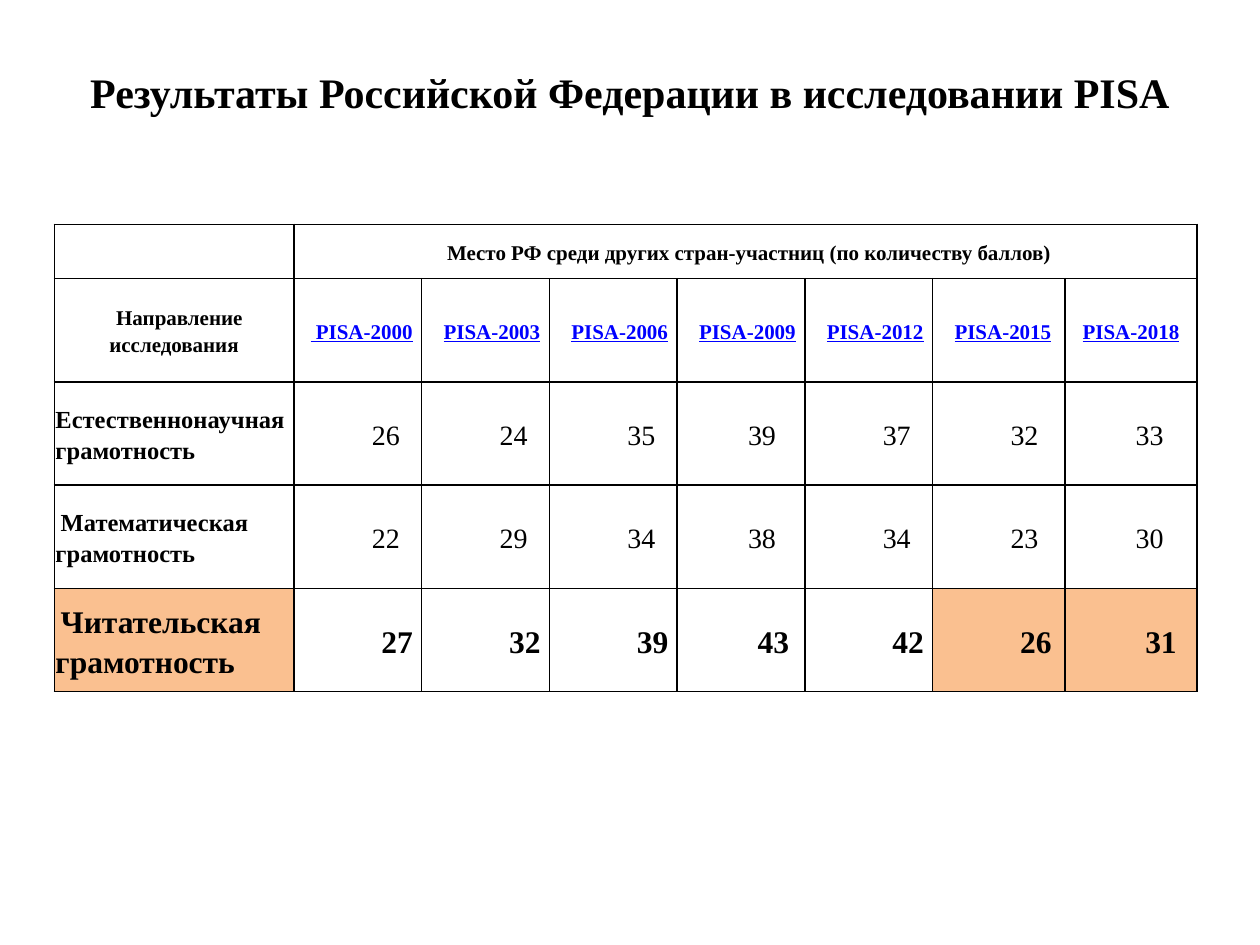
"""Build a slide with a table of PISA results."""
from dataclasses import dataclass

from lxml.etree import SubElement
from pptx import Presentation
from pptx.dml.color import RGBColor
from pptx.enum.text import MSO_ANCHOR as Anchor, PP_ALIGN as Align
from pptx.oxml.ns import qn
from pptx.util import Pt


@dataclass(frozen=True)
class Theme:
    font: str = "Times New Roman"
    text: str = "000000"
    link: str = "0000FF"
    accent: str = "FAC090"
    title: float = 24
    head: float = 12
    label: float = 14
    value: float = 16
    strong: float = 18


class Deck:
    def __init__(self, theme):
        self.theme = theme
        self.prs = Presentation()
        self.prs.slide_width, self.prs.slide_height = Pt(720), Pt(540)
        self.s = self.prs.slides.add_slide(self.prs.slide_layouts[5])

    def style(self, p, size, bold=True, color=None, align=Align.LEFT):
        p.alignment, p.line_spacing, p.space_after = align, 1.15, Pt(10)
        f = p.font
        f.name, f.size, f.bold = self.theme.font, Pt(size), bold
        f.color.rgb = RGBColor.from_string(color or self.theme.text)

    def title(self, text, x, y, w, h):
        sp = self.s.shapes.title
        sp.left, sp.top, sp.width, sp.height = Pt(x), Pt(y), Pt(w), Pt(h)
        tf = sp.text_frame
        tf.text, tf.vertical_anchor = text, Anchor.MIDDLE
        tf.margin_bottom = Pt(36)
        self.style(tf.paragraphs[0], self.theme.title, align=Align.CENTER)

    def table(self, x, y, widths, heights):
        sp = self.s.shapes.add_table(len(heights), len(widths), Pt(x), Pt(y),
                                     Pt(sum(widths)), Pt(sum(heights)))
        tbl = sp.table
        tbl.first_row = tbl.horz_banding = False
        for col, width in zip(tbl.columns, widths):
            col.width = Pt(width)
        for row, height in zip(tbl.rows, heights):
            row.height = Pt(height)
        for cell in tbl.iter_cells():
            self.borders(cell)
            cell.fill.background()
        return tbl

    def borders(self, cell):
        tc_pr = cell._tc.get_or_add_tcPr()
        for side in ("lnL", "lnR", "lnT", "lnB"):
            ln = SubElement(tc_pr, qn(f"a:{side}"), w=str(Pt(1)))
            fill = SubElement(ln, qn("a:solidFill"))
            SubElement(fill, qn("a:srgbClr"), val=self.theme.text)

    def cell(self, cell, text, size, left=0.7, first=0, underline=False, fill=None, **style):
        cell.text, cell.vertical_anchor = text, Anchor.MIDDLE
        cell.margin_left = Pt(left)
        cell.margin_right = cell.margin_top = cell.margin_bottom = Pt(0.7)
        p = cell.text_frame.paragraphs[0]
        self.style(p, size, **style)
        if underline:
            p.font.underline = True
        if first:
            p._p.get_or_add_pPr().set("indent", str(Pt(first)))
        if fill:
            cell.fill.solid()
            cell.fill.fore_color.rgb = RGBColor.from_string(fill)


def main():
    t = Theme()
    deck = Deck(t)
    deck.title("Результаты Российской Федерации в исследовании PISA", 36, 21.6, 648, 90)

    tbl = deck.table(31, 128.2, [137] + [73] * 5 + [75.5] * 2, [31] + [59] * 4)
    tbl.cell(0, 1).merge(tbl.cell(0, 7))
    deck.cell(tbl.cell(0, 1), "Место РФ среди других стран-участниц (по количеству баллов)",
              t.head, left=87.5)

    deck.cell(tbl.cell(1, 0), "Направление исследования", t.head, first=6, align=Align.CENTER)
    years = (2000, 2003, 2006, 2009, 2012, 2015, 2018)
    for col, year in enumerate(years, 1):
        lead, left = {2000: (" ", 9.5), 2018: ("", 10.2)}.get(year, ("", 12.5))
        deck.cell(tbl.cell(1, col), f"{lead}PISA-{year}", t.head, left=left,
                  underline=True, color=t.link)

    results = (
        ("Естественнонаучная грамотность", 0, t.label, (26, 24, 35, 39, 37, 32, 33)),
        ("Математическая грамотность", 3, t.label, (22, 29, 34, 38, 34, 23, 30)),
        ("Читательская грамотность", 3, t.strong, (27, 32, 39, 43, 42, 26, 31)),
    )
    for row, (label, first, size, places) in enumerate(results, 2):
        strong = size == t.strong
        deck.cell(tbl.cell(row, 0), label, size, first=first, fill=t.accent if strong else None)
        for col, (year, place) in enumerate(zip(years, places), 1):
            left = (50 if strong else 44.5) - (4 if year in (2009, 2018) else 0)
            deck.cell(tbl.cell(row, col), str(place), t.strong if strong else t.value,
                      left=left, bold=strong,
                      fill=t.accent if strong and year >= 2015 else None)

    deck.prs.save("out.pptx")


if __name__ == "__main__":
    main()
